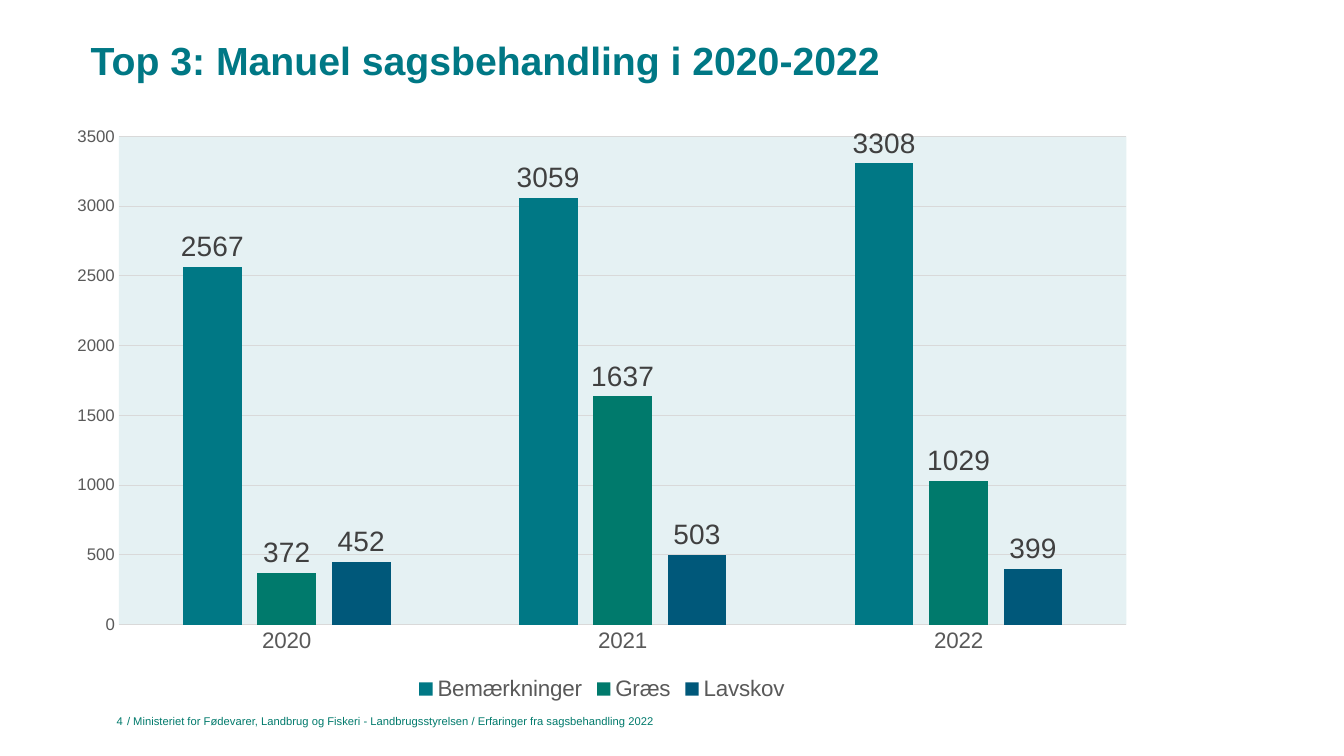
import pptx
import pptx.util
import pptx.chart.data
import pptx.dml.color
import pptx.enum.chart
import pptx.enum.text
import pptx.oxml
from pptx.util import Inches

TEAL, GREEN, BLUE = "007885", "007A6C", "00587A"
GREY, RULE, PANEL = "595959", "D9D9D9", "E5F1F3"
ANCHOR = pptx.enum.text.MSO_ANCHOR
ALIGN = pptx.enum.text.PP_ALIGN
ENUM = pptx.enum.chart


def color(code):
    return pptx.dml.color.RGBColor.from_string(code)


def write(text, box, size, code, bold=False, align=ALIGN.LEFT,
          anchor=ANCHOR.TOP, space=1.0):
    frame = slide.shapes.add_textbox(*map(Inches, box)).text_frame
    frame.word_wrap = True
    frame.vertical_anchor = anchor
    frame.margin_left = frame.margin_right = 0
    frame.margin_top = frame.margin_bottom = 0
    para = frame.paragraphs[0]
    para.text = text
    para.alignment = align
    para.line_spacing = space
    font = para.runs[0].font
    font.name, font.size, font.bold = "Arial", pptx.util.Pt(size), bold
    font.color.rgb = color(code)


deck = pptx.Presentation()
deck.slide_width, deck.slide_height = Inches(13.33), Inches(7.5)
slide = deck.slides.add_slide(deck.slide_layouts[6])

# Title
write("Top 3: Manuel sagsbehandling i 2020-2022", (0.9, 0.41, 11.9, 0.51),
      28, TEAL, bold=True, space=0.9)

# Chart data
data = pptx.chart.data.CategoryChartData()
data.categories = ["2020", "2021", "2022"]
data.add_series("Bemærkninger", (2567, 3059, 3308))
data.add_series("Græs", (372, 1637, 1029))
data.add_series("Lavskov", (452, 503, 399))
chart = slide.shapes.add_chart(
    ENUM.XL_CHART_TYPE.COLUMN_CLUSTERED, Inches(0.55), Inches(1.15),
    Inches(10.84), Inches(5.85), data).chart
chart.has_title = False
chart.has_legend = True
chart.legend.position = ENUM.XL_LEGEND_POSITION.BOTTOM
chart.legend.include_in_layout = False

# Columns
plot = chart.plots[0]
plot.vary_by_categories = False
plot.gap_width, plot.overlap = 219, -27
plot.has_data_labels = True
labels = plot.data_labels
labels.show_value = True
labels.position = ENUM.XL_LABEL_POSITION.OUTSIDE_END
for series, code in zip(plot.series, (TEAL, GREEN, BLUE)):
    series.format.fill.solid()
    series.format.fill.fore_color.rgb = color(code)
    series.invert_if_negative = False

# Axes
years, counts = chart.category_axis, chart.value_axis
for axis in (years, counts):
    axis.major_tick_mark = axis.minor_tick_mark = ENUM.XL_TICK_MARK.NONE
counts.minimum_scale, counts.maximum_scale, counts.major_unit = 0, 3500, 500
counts.format.line.fill.background()
for line in (years.format.line, counts.major_gridlines.format.line):
    line.color.rgb = color(RULE)
    line.width = pptx.util.Pt(0.75)

# Chart fonts
for font, size, code in ((chart.font, 10, "000000"),
                         (chart.legend.font, 16, GREY),
                         (years.tick_labels.font, 16, GREY),
                         (counts.tick_labels.font, 12, GREY),
                         (labels.font, 20, "404040")):
    font.name, font.size = "Arial", pptx.util.Pt(size)
    font.color.rgb = color(code)

# Plot area: inner layout and fill
names = ('xmlns:c="http://schemas.openxmlformats.org/drawingml/2006/chart" '
         'xmlns:a="http://schemas.openxmlformats.org/drawingml/2006/main"')
area = chart.element.chart.plotArea
for old in area.xpath("c:layout"):
    area.remove(old)
area.insert(0, pptx.oxml.parse_xml(
    f'<c:layout {names}><c:manualLayout><c:layoutTarget val="inner"/>'
    '<c:xMode val="edge"/><c:yMode val="edge"/><c:x val="0.058"/>'
    '<c:y val="0.035"/><c:w val="0.922"/><c:h val="0.828"/>'
    '</c:manualLayout></c:layout>'))
area.append(pptx.oxml.parse_xml(
    f'<c:spPr {names}><a:solidFill><a:srgbClr val="{PANEL}"/>'
    '</a:solidFill><a:ln><a:noFill/></a:ln></c:spPr>'))

# Footer
write("/ Ministeriet for Fødevarer, Landbrug og Fiskeri - Landbrugsstyrelsen "
      "/ Erfaringer fra sagsbehandling 2022", (1.26, 7, 6.18, 0.22), 8, GREEN,
      anchor=ANCHOR.BOTTOM)
write("4", (0.89, 7, 0.33, 0.22), 8, GREEN, align=ALIGN.RIGHT,
      anchor=ANCHOR.BOTTOM)

deck.save("out.pptx")
